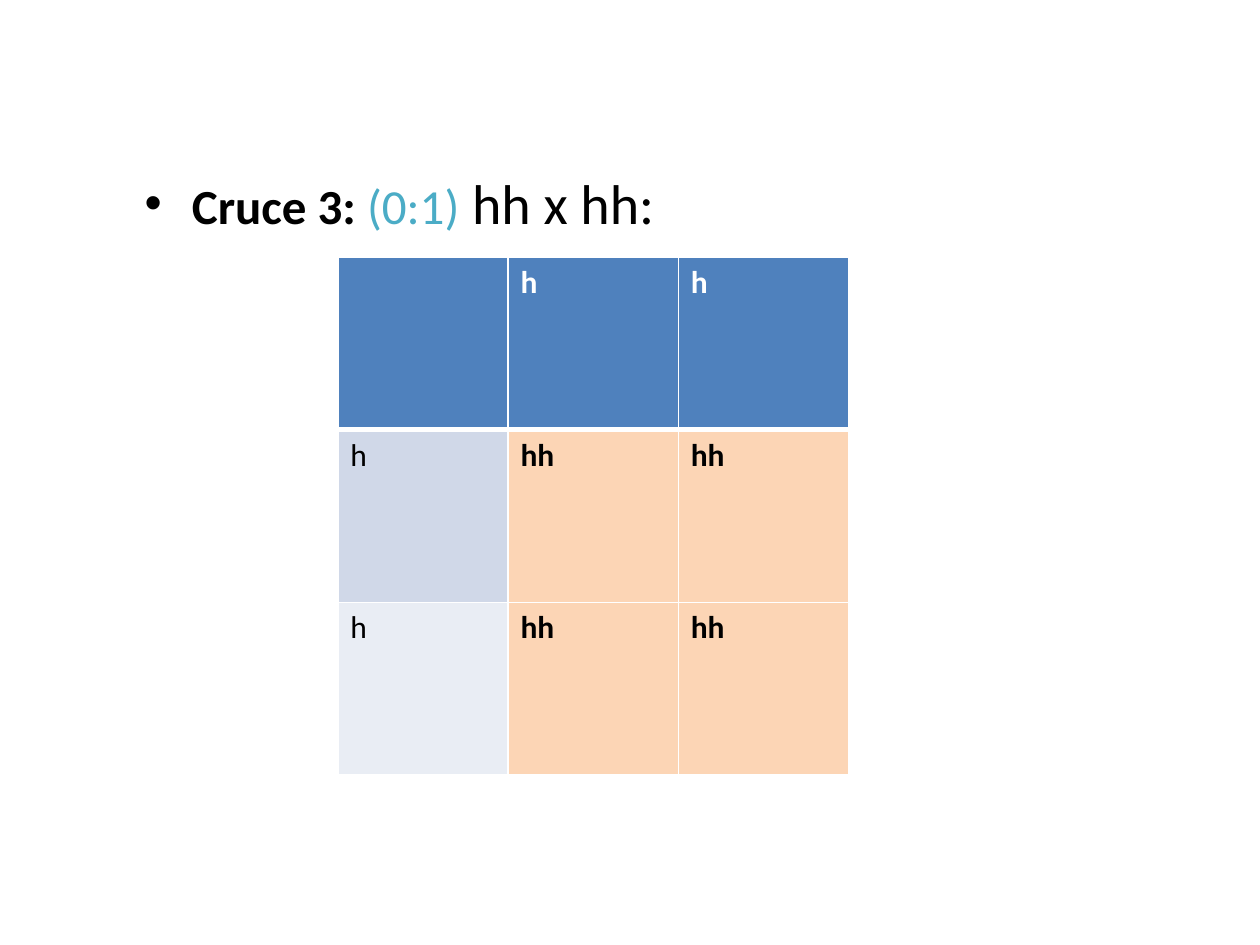
from lxml import etree
from pptx import Presentation, util as u
from pptx.dml.color import RGBColor
from pptx.enum import text
from pptx.oxml.ns import qn

COLORS = {
    "black": "000000", "white": "FFFFFF", "teal": "4BACC6", "header": "4F81BD",
    "band1": "D0D8E8", "band2": "E9EDF4", "peach": "FCD5B5",
}
FONT = "Calibri"
HEADING = [
    ("Cruce 3: ", 28, True, "black"),
    ("(0:1)", 28, False, "teal"),
    (" hh x hh:", 32, False, "black"),
]
CROSS = [["", "h", "h"], ["h", "hh", "hh"], ["h", "hh", "hh"]]
ROW_FILLS = ["header", "band1", "band2"]
BODY = (75.6, 92.9, 569.5, 337.7)
TABLE_LEFT, TABLE_TOP, COL_W, ROW_H = 193, 147, 97.3, 98.6
INDENT = 27


def add_run(p, content, size, bold, color):
    r = p.add_run()
    r.text = content
    r.font.name = FONT
    r.font.size = u.Pt(size)
    r.font.bold = bold
    r.font.color.rgb = RGBColor.from_string(COLORS[color])


def add_heading(s):
    tf = s.shapes.add_textbox(*map(u.Pt, BODY)).text_frame
    tf.word_wrap = True
    tf.vertical_anchor = text.MSO_ANCHOR.TOP
    p = tf.paragraphs[0]
    pPr = p._p.get_or_add_pPr()
    pPr.set("marL", str(u.Pt(INDENT)))
    pPr.set("indent", str(-u.Pt(INDENT)))
    etree.SubElement(pPr, qn("a:buFont"), typeface="Arial")
    etree.SubElement(pPr, qn("a:buChar"), char="•")
    for run in HEADING:
        add_run(p, *run)


def set_borders(cell, widths):
    tcPr = cell._tc.get_or_add_tcPr()
    for i, (side, width) in enumerate(widths.items()):
        ln = etree.Element(qn(f"a:ln{side}"), w=str(u.Pt(width)))
        fill = etree.SubElement(ln, qn("a:solidFill"))
        etree.SubElement(fill, qn("a:srgbClr"), val=COLORS["white"])
        tcPr.insert(i, ln)


def add_cross(s):
    n_rows, n_cols = len(CROSS), len(CROSS[0])
    table = s.shapes.add_table(
        n_rows, n_cols, u.Pt(TABLE_LEFT), u.Pt(TABLE_TOP),
        u.Pt(COL_W * n_cols), u.Pt(ROW_H * n_rows)).table
    for col in table.columns:
        col.width = u.Pt(COL_W)
    for i, row in enumerate(CROSS):
        table.rows[i].height = u.Pt(ROW_H)
        for j, content in enumerate(row):
            cell = table.cell(i, j)
            fill = "peach" if i and j else ROW_FILLS[i]
            cell.fill.solid()
            cell.fill.fore_color.rgb = RGBColor.from_string(COLORS[fill])
            set_borders(cell, {"L": 1, "R": 1, "T": 3 if i == 1 else 1,
                               "B": 3 if i == 0 else 1})
            if content:
                add_run(cell.text_frame.paragraphs[0], content, 18,
                        i == 0 or j > 0, "black" if i else "white")


def main():
    prs = Presentation()
    prs.slide_width, prs.slide_height = u.Pt(720), u.Pt(540)
    s = prs.slides.add_slide(prs.slide_layouts[6])
    add_heading(s)
    add_cross(s)
    prs.save("out.pptx")


if __name__ == "__main__":
    main()
